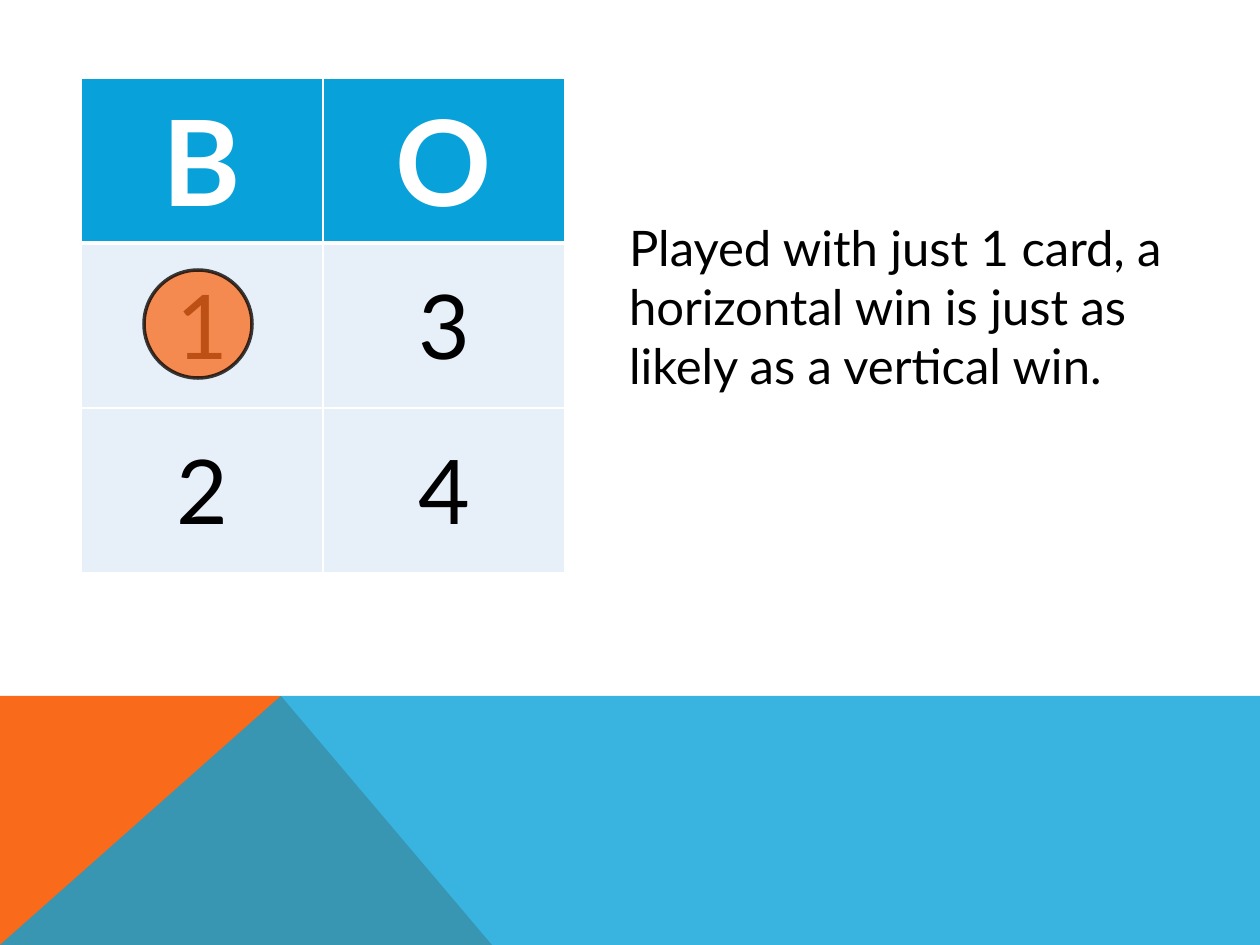
import pptx
import pptx.util
import pptx.dml.color
import pptx.enum.shapes
import pptx.enum.text
import pptx.oxml
import pptx.oxml.ns
from dataclasses import dataclass

PX = 914400 / 126  # EMU in one px
ALIGN = pptx.enum.text.PP_ALIGN
MIDDLE = pptx.enum.text.MSO_ANCHOR.MIDDLE


@dataclass(frozen=True)
class Theme:
    font: str = "Lato"
    blue: str = "08A1D9"
    orange: str = "F96A1B"
    pale: str = "E7F0F8"
    white: str = "FFFFFF"
    black: str = "000000"
    header_pt: int = 68
    number_pt: int = 51
    body_pt: int = 28


def emu(px):
    return pptx.util.Emu(round(px * PX))


def rgb(color):
    return pptx.dml.color.RGBColor.from_string(color)


def write(tf, text, *, font, size, color, bold=False, align=ALIGN.LEFT):
    p = tf.paragraphs[0]
    p.alignment = align
    r = p.add_run()
    r.text = text
    r.font.name = font
    r.font.size = pptx.util.Pt(size)
    r.font.bold = bold
    r.font.color.rgb = rgb(color)


def paint(fill, color, opacity=100):
    fill.solid()
    fill.fore_color.rgb = rgb(color)
    if opacity < 100:
        srgb = fill._xPr.find(".//" + pptx.oxml.ns.qn("a:srgbClr"))
        alpha = pptx.oxml.parse_xml(
            f'<a:alpha {pptx.oxml.ns.nsdecls("a")} val="{opacity * 1000}"/>')
        srgb.append(alpha)


def border(cell, side, color, width):
    cell._tc.get_or_add_tcPr().append(pptx.oxml.parse_xml(
        f'<a:ln{side} {pptx.oxml.ns.nsdecls("a")} w="{width * 12700}">'
        f'<a:solidFill><a:srgbClr val="{color}"/></a:solidFill></a:ln{side}>'))


class Deck:
    def __init__(self, theme, width, height):
        self.theme = theme
        self.prs = pptx.Presentation()
        self.prs.slide_width, self.prs.slide_height = emu(width), emu(height)
        self.s = self.prs.slides.add_slide(self.prs.slide_layouts[6])

    def polygon(self, points, color, opacity=100):
        builder = self.s.shapes.build_freeform(*points[0], scale=PX)
        builder.add_line_segments(points[1:], close=True)
        sp = builder.convert_to_shape()
        sp.shadow.inherit = False
        sp.line.fill.background()
        paint(sp.fill, color, opacity)

    def circle(self, x, y, size, color, opacity):
        sp = self.s.shapes.add_shape(
            pptx.enum.shapes.MSO_SHAPE.OVAL, emu(x), emu(y), emu(size), emu(size))
        sp.shadow.inherit = False
        paint(sp.fill, color, opacity)
        paint(sp.line.fill, self.theme.black, opacity)
        sp.line.width = pptx.util.Pt(2)

    def text(self, x, y, w, h, text, inset):
        sp = self.s.shapes.add_textbox(emu(x), emu(y), emu(w), emu(h))
        tf = sp.text_frame
        tf.word_wrap = True
        tf.vertical_anchor = MIDDLE
        tf.margin_left = tf.margin_right = emu(inset)
        tf.margin_top = tf.margin_bottom = emu(inset)
        write(tf, text, font=self.theme.font, size=self.theme.body_pt,
              color=self.theme.black)

    def table(self, x, y, col_w, row_h, rows, inset):
        t = self.theme
        n_rows, n_cols = len(rows), len(rows[0])
        table = self.s.shapes.add_table(
            n_rows, n_cols, emu(x), emu(y),
            emu(col_w * n_cols), emu(row_h * n_rows)).table
        table.horz_banding = False
        for col in table.columns:
            col.width = emu(col_w)
        for i, row in enumerate(rows):
            table.rows[i].height = emu(row_h)
            header = i == 0
            for j, value in enumerate(row):
                cell = table.cell(i, j)
                cell.vertical_anchor = MIDDLE
                cell.margin_left = cell.margin_right = emu(inset)
                cell.margin_top = cell.margin_bottom = emu(inset)
                # The rule under the header is thicker than the others
                widths = {"L": 1, "R": 1, "T": 3 if i == 1 else 1,
                          "B": 3 if header else 1}
                for side, width in widths.items():
                    border(cell, side, t.white, width)
                paint(cell.fill, t.blue if header else t.pale)
                write(cell.text_frame, value, font=t.font,
                      size=t.header_pt if header else t.number_pt,
                      color=t.white if header else t.black,
                      bold=header, align=ALIGN.CENTER)

    def save(self):
        self.prs.save("out.pptx")


def main():
    theme = Theme()
    width, height = 1260, 945
    deck = Deck(theme, width, height)

    # Bottom band: orange wedge under a translucent blue one
    peak, band_top = 281, 696
    deck.polygon([(0, height), (0, band_top), (peak, band_top), (492, height)],
                 theme.orange)
    deck.polygon([(0, height), (peak, band_top), (width, band_top),
                  (width, height)], theme.blue, 80)

    # Game card
    deck.table(81, 78, 242, 165, [["B", "O"], ["1", "3"], ["2", "4"]], inset=5)

    # Explanation
    deck.text(624, 212, 624, 188,
              "Played with just 1 card, a horizontal win is just as likely "
              "as a vertical win.", inset=5)

    # Chip on the called number
    deck.circle(144, 270, 108, theme.orange, 76)

    deck.save()


if __name__ == "__main__":
    main()
